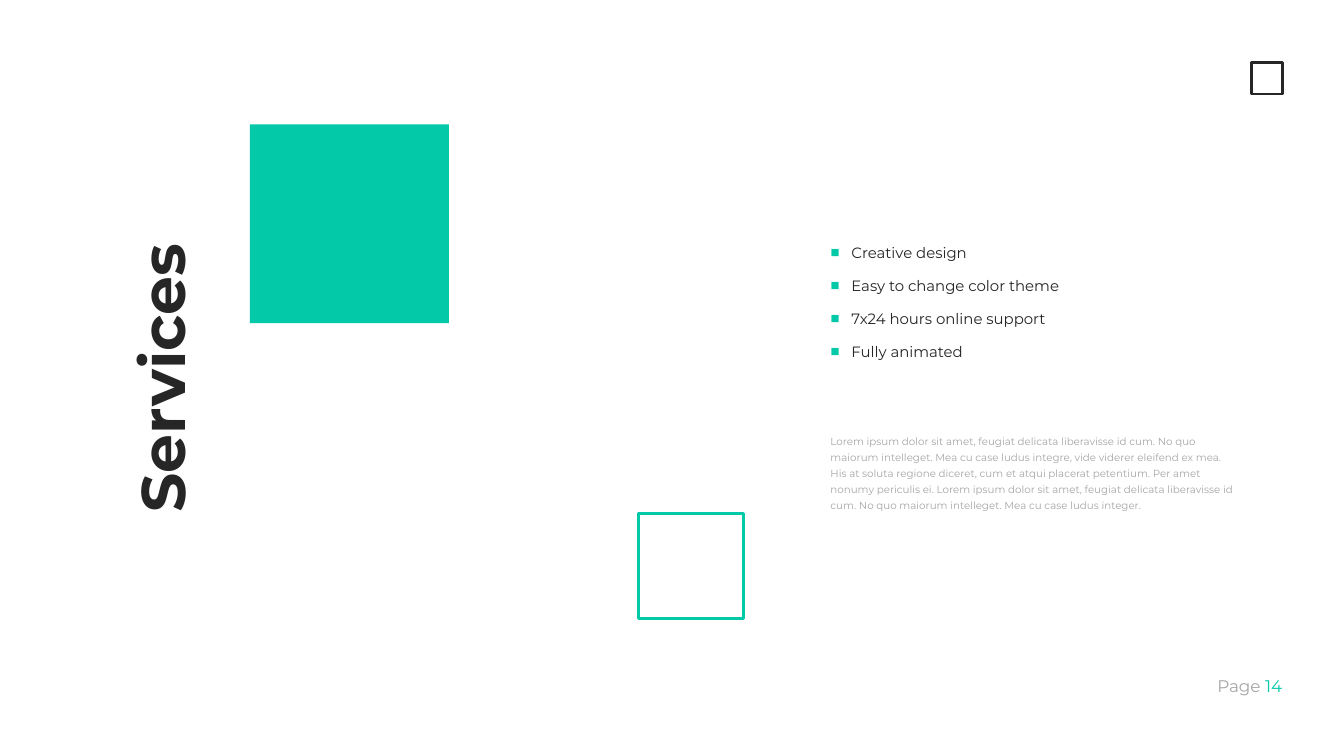
"""Build the Services slide with its feature list, description and squares."""
import pptx
import pptx.dml.color
import pptx.enum.shapes
import pptx.enum.text
import pptx.oxml
import pptx.oxml.ns
import pptx.util
from pptx.util import Inches

COLORS = {"teal": "03C9A9", "dark": "262626", "gray": "A6A6A6"}
FONT = "Montserrat"
ALIGN = pptx.enum.text.PP_ALIGN

TITLE = "Services"
FEATURES = [
    "Creative design",
    "Easy to change color theme",
    "7x24 hours online support",
    "Fully animated",
]
DESCRIPTION = (
    "Lorem ipsum dolor sit amet, feugiat delicata liberavisse id cum. "
    "No quo maiorum intelleget. Mea cu case ludus integre, vide viderer eleifend ex mea. "
    "His at soluta regione diceret, cum et atqui placerat petentium. "
    "Per amet nonumy periculis ei. Lorem ipsum dolor sit amet, feugiat delicata "
    "liberavisse id cum. No quo maiorum intelleget. Mea cu case ludus integer."
)
PAGE_LABEL = [("Page ", "gray"), ("14", "teal")]
SQUARES = [
    {"left": 3.72, "top": 1.85, "side": 2.96, "fill": "teal"},
    {"left": 9.5, "top": 7.64, "side": 1.57, "line": "teal"},
    {"left": 18.62, "top": 0.93, "side": 0.47, "line": "dark"},
]
COLUMN_LEFT = 12.26


def rgb(name):
    """Return the palette colour with this name."""
    return pptx.dml.color.RGBColor.from_string(COLORS[name])


def place(shape, left, top, width, height):
    """Move and size a shape in inches."""
    shape.left, shape.top = Inches(left), Inches(top)
    shape.width, shape.height = Inches(width), Inches(height)


def add_bullet(paragraph, color, indent):
    """Give a paragraph a coloured square bullet with a hanging indent."""
    properties = paragraph._p.get_or_add_pPr()
    properties.set("marL", str(Inches(indent)))
    properties.set("indent", str(-Inches(indent)))
    namespace = pptx.oxml.ns.nsdecls("a")
    for xml in (
        f'<a:buClr {namespace}><a:srgbClr val="{COLORS[color]}"/></a:buClr>',
        f'<a:buFont {namespace} typeface="Arial"/>',
        f'<a:buChar {namespace} char="■"/>',
    ):
        properties.append(pptx.oxml.parse_xml(xml))


def write(shape, paragraphs, size, color="dark", bold=False, align=ALIGN.LEFT,
          anchor=pptx.enum.text.MSO_ANCHOR.TOP, line_spacing=1.0,
          before=0, after=0, bullet=None):
    """Fill a shape with paragraphs, each a string or a list of (text, colour) runs."""
    frame = shape.text_frame
    frame.word_wrap = True
    frame.auto_size = pptx.enum.text.MSO_AUTO_SIZE.NONE
    frame.vertical_anchor = anchor
    for index, content in enumerate(paragraphs):
        paragraph = frame.add_paragraph() if index else frame.paragraphs[0]
        paragraph.alignment = align
        paragraph.line_spacing = line_spacing
        paragraph.space_before = pptx.util.Pt(before)
        paragraph.space_after = pptx.util.Pt(after)
        if bullet:
            add_bullet(paragraph, bullet, 0.31)
        runs = [(content, color)] if isinstance(content, str) else content
        for text, run_color in runs:
            run = paragraph.add_run()
            run.text = text
            run.font.name = FONT
            run.font.size = pptx.util.Pt(size)
            run.font.bold = bold
            run.font.color.rgb = rgb(run_color)


def add_text(slide, left, top, width, height):
    """Add an empty text box, placed in inches."""
    return slide.shapes.add_textbox(*map(Inches, (left, top, width, height)))


def add_square(slide, left, top, side, fill=None, line=None):
    """Add a filled or outlined square."""
    square = slide.shapes.add_shape(
        pptx.enum.shapes.MSO_SHAPE.RECTANGLE, *map(Inches, (left, top, side, side)))
    square.shadow.inherit = False
    if fill:
        square.fill.solid()
        square.fill.fore_color.rgb = rgb(fill)
    else:
        square.fill.background()
    if line:
        square.line.color.rgb = rgb(line)
        square.line.width = pptx.util.Pt(3)
    else:
        square.line.fill.background()


def main():
    """Create the slide and save it."""
    presentation = pptx.Presentation()
    presentation.slide_width, presentation.slide_height = Inches(20), Inches(11.25)
    slide = presentation.slides.add_slide(presentation.slide_layouts[1])

    title = slide.shapes.title
    place(title, 0.12, 5.02, 4.55, 1.21)
    title.rotation = 270
    write(title, [TITLE], size=66, bold=True, align=ALIGN.CENTER)

    features = slide.placeholders[1]
    place(features, COLUMN_LEFT, 3.57, 4.17, 1.86)
    write(features, FEATURES, size=16, after=16.2, bullet="teal")

    description = add_text(slide, COLUMN_LEFT, 6.38, 6.24, 1.3)
    write(description, [DESCRIPTION], size=11, color="gray", line_spacing=1.3, before=12)

    page = add_text(slide, 17.42, 10.01, 1.76, 0.4)
    write(page, [PAGE_LABEL], size=18, align=ALIGN.RIGHT)

    for square in SQUARES:
        add_square(slide, **square)

    presentation.save("out.pptx")


if __name__ == "__main__":
    main()
